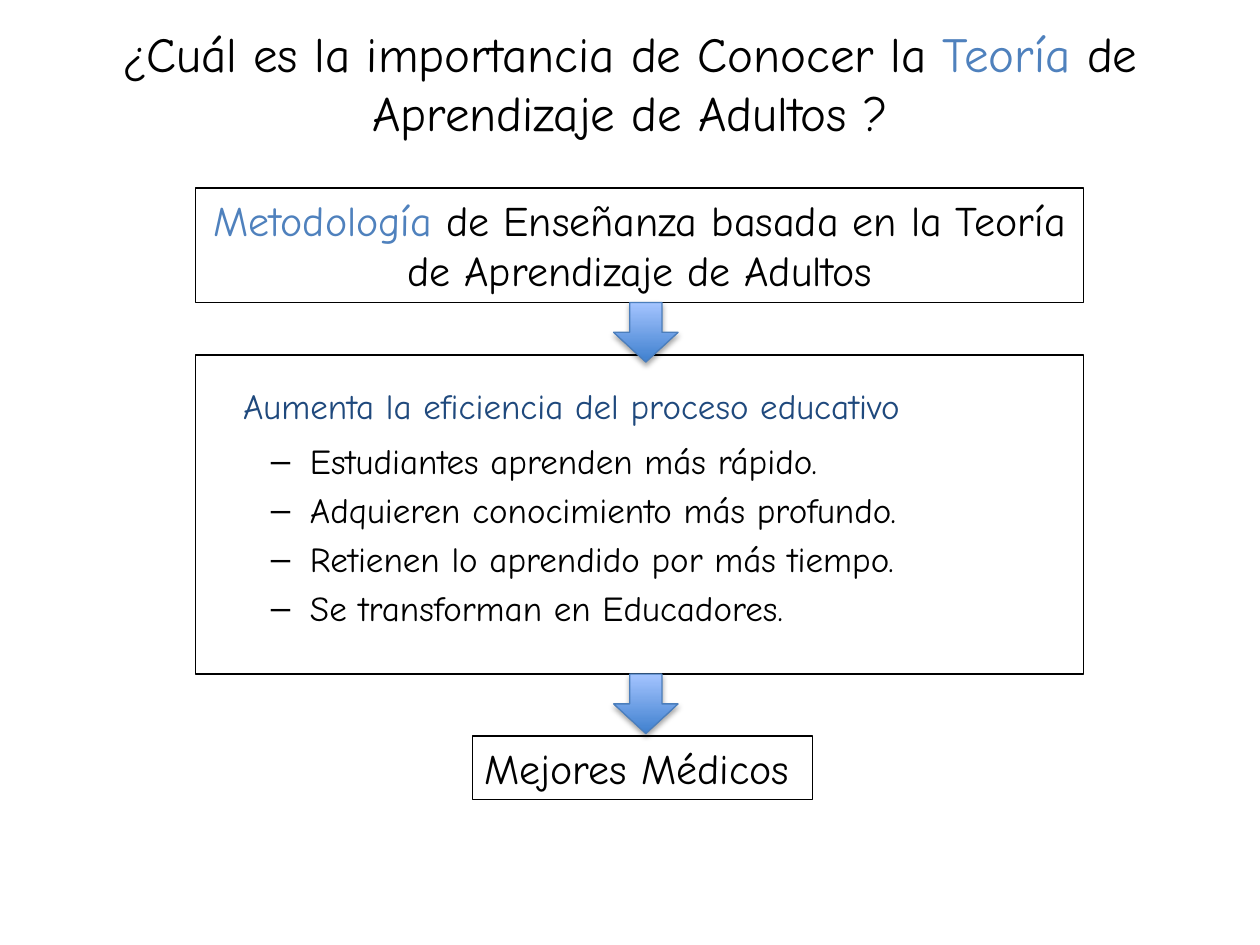
"""Build a slide on why adult learning theory matters, as a flow of three boxes."""
from dataclasses import dataclass

from lxml.etree import SubElement
from pptx import Presentation
from pptx.dml.color import RGBColor
from pptx.enum.shapes import MSO_SHAPE
from pptx.enum.text import MSO_ANCHOR, PP_ALIGN
from pptx.oxml.ns import qn
from pptx.util import Cm, Pt


@dataclass(frozen=True)
class Theme:
    font: str = "Comic Neue"
    black: str = "000000"
    accent: str = "4F81BD"
    navy: str = "1F497D"
    arrow_line: str = "4B7EBC"
    arrow_stops: tuple = ("3F80CE", "A4C4FF")
    title_size: int = 28
    box_size: int = 24
    body_size: int = 20
    line_width: float = 0.75


class SlideBuilder:
    def __init__(self, slide, theme):
        self.slide = slide
        self.theme = theme

    def add_runs(self, paragraph, size, runs):
        for text, color in runs:
            run = paragraph.add_run()
            run.text = text
            run.font.name = self.theme.font
            run.font.size = Pt(size)
            run.font.color.rgb = RGBColor.from_string(color)

    def outline(self, shape, color):
        shape.line.color.rgb = RGBColor.from_string(color)
        shape.line.width = Pt(self.theme.line_width)

    def add_title(self, left, top, width, height, runs):
        shape = self.slide.shapes.add_textbox(Cm(left), Cm(top), Cm(width), Cm(height))
        frame = shape.text_frame
        frame.word_wrap = True
        frame.vertical_anchor = MSO_ANCHOR.MIDDLE
        frame.paragraphs[0].alignment = PP_ALIGN.CENTER
        self.add_runs(frame.paragraphs[0], self.theme.title_size, runs)

    def add_box(self, left, top, width, height, size, runs, align=PP_ALIGN.LEFT, wrap=True):
        shape = self.slide.shapes.add_shape(
            MSO_SHAPE.RECTANGLE, Cm(left), Cm(top), Cm(width), Cm(height))
        shape.shadow.inherit = False
        shape.fill.background()
        self.outline(shape, self.theme.black)
        frame = shape.text_frame
        frame.word_wrap = wrap
        frame.vertical_anchor = MSO_ANCHOR.TOP
        frame.paragraphs[0].alignment = align
        self.add_runs(frame.paragraphs[0], size, runs)
        return frame

    def indent(self, paragraph, margin, first_line=0):
        properties = paragraph._p.get_or_add_pPr()
        properties.set("marL", str(Cm(margin)))
        properties.set("indent", str(Cm(first_line)))
        return properties

    def add_list_box(self, left, top, width, height, heading, items):
        theme = self.theme
        frame = self.add_box(left, top, width, height, theme.body_size, [(heading, theme.navy)])
        frame.margin_top = Cm(0.6)
        self.indent(frame.paragraphs[0], 0.71)
        frame.paragraphs[0].space_after = Pt(3)
        for item in items:
            paragraph = frame.add_paragraph()
            paragraph.alignment = PP_ALIGN.LEFT
            paragraph.level = 1
            paragraph.space_before = Pt(4)
            properties = self.indent(paragraph, 2.06, -0.79)
            SubElement(properties, qn("a:buFont"), typeface="Arial")
            SubElement(properties, qn("a:buChar"), char="–")
            self.add_runs(paragraph, theme.body_size, [(item, theme.black)])

    def add_down_arrow(self, left, top, width, height):
        shape = self.slide.shapes.add_shape(
            MSO_SHAPE.DOWN_ARROW, Cm(left), Cm(top), Cm(width), Cm(height))
        shape.shadow.inherit = False
        shape.fill.gradient()
        shape.fill.gradient_angle = 90
        for stop, color in zip(shape.fill.gradient_stops, self.theme.arrow_stops):
            stop.color.rgb = RGBColor.from_string(color)
        self.outline(shape, self.theme.arrow_line)
        effects = shape._element.spPr.find(qn("a:effectLst"))
        shadow = SubElement(effects, qn("a:outerShdw"), blurRad=str(Pt(3.1)),
                            dist=str(Pt(1.8)), dir="5400000", rotWithShape="0")
        color = SubElement(shadow, qn("a:srgbClr"), val=self.theme.black)
        SubElement(color, qn("a:alpha"), val="35000")


def main():
    presentation = Presentation()
    presentation.slide_width, presentation.slide_height = Cm(25.4), Cm(19.05)
    theme = Theme()
    builder = SlideBuilder(presentation.slides.add_slide(presentation.slide_layouts[6]), theme)

    builder.add_title(1.27, 0.08, 22.86, 3.18, [
        ("¿Cuál es la importancia de Conocer la ", theme.black),
        ("Teoría", theme.accent),
        (" de Aprendizaje de Adultos ?", theme.black)])

    box_left, box_width = 3.94, 17.91
    method_top, method_height = 3.79, 2.31
    benefits_top, benefits_height = 7.16, 6.43
    builder.add_list_box(
        box_left, benefits_top, box_width, benefits_height,
        "Aumenta la eficiencia del proceso educativo",
        ["Estudiantes aprenden más rápido.",
         "Adquieren conocimiento más profundo.",
         "Retienen lo aprendido por más tiempo.",
         "Se transforman en Educadores."])
    builder.add_box(9.52, 14.84, 6.86, 1.28, theme.box_size,
                    [("Mejores Médicos", theme.black)], wrap=False)
    builder.add_box(box_left, method_top, box_width, method_height, theme.box_size, [
        ("Metodología", theme.accent),
        (" de Enseñanza basada en la Teoría de Aprendizaje de Adultos", theme.black)],
        align=PP_ALIGN.CENTER)

    for arrow_top in (method_top + method_height, benefits_top + benefits_height):
        builder.add_down_arrow(12.37, arrow_top, 1.3, 1.2)

    presentation.save("out.pptx")


if __name__ == "__main__":
    main()
